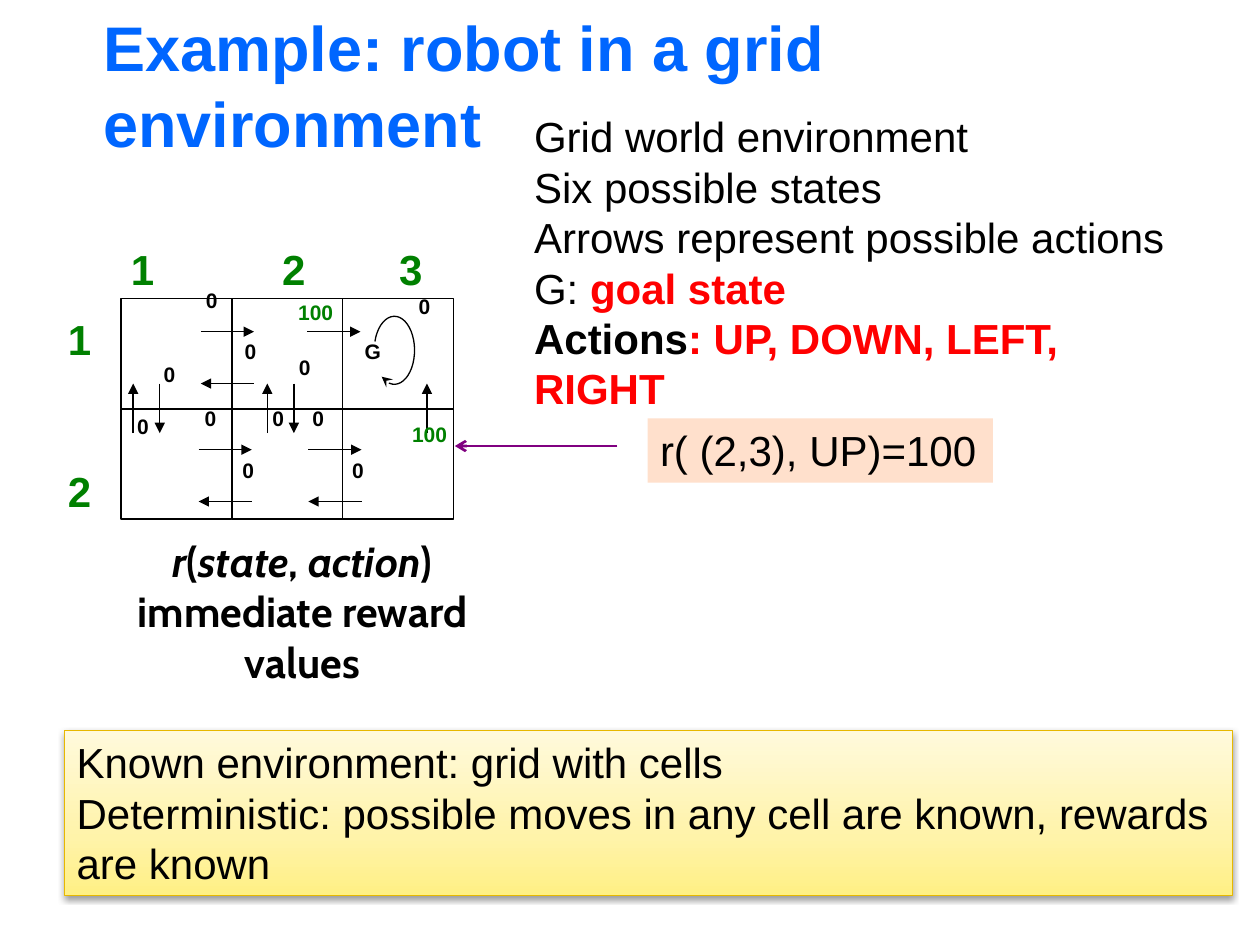
import math
from typing import NamedTuple

import pptx
import pptx.dml.color
import pptx.enum.dml
import pptx.enum.shapes
import pptx.enum.text
import pptx.oxml.ns
import pptx.util

SLIDE_W, SLIDE_H = pptx.util.Inches(10), pptx.util.Inches(7.5)
GRID_LEFT, GRID_TOP, COL, ROW = 9.6, 31.6, 8.8, 11.67
BLACK, GREEN, RED = "000000", "008000", "FF0000"
SHAPE = pptx.enum.shapes.MSO_SHAPE
ALIGN = pptx.enum.text.PP_ALIGN


class Box(NamedTuple):
    """Percentages of the slide's width and height."""
    x: float
    y: float
    w: float
    h: float

    def emu(self) -> list[int]:
        return [round(v * side / 100) for v, side in zip(self, (SLIDE_W, SLIDE_H) * 2)]


class Run(NamedTuple):
    text: str
    color: str | None = None
    bold: bool | None = None
    italic: bool | None = None
    size: float | None = None


class Arrow(NamedTuple):
    """Start and direction in grid columns and rows."""
    col: float
    row: float
    dcol: float
    drow: float


class Reward(NamedTuple):
    col: float
    row: float
    text: str = "0"
    width: float = 3.5
    color: str = BLACK


def rgb(color: str):
    return pptx.dml.color.RGBColor.from_string(color)


def on_grid(col: float, row: float) -> tuple[float, float]:
    return GRID_LEFT + col * COL, GRID_TOP + row * ROW


def child(parent, tag: str, **attrs):
    el = pptx.oxml.parse_xml(f"<{tag} {pptx.oxml.ns.nsdecls('a')}/>")
    for name, value in attrs.items():
        el.set(name, str(value))
    parent.append(el)
    return el


def write(tf, paragraphs: list[list[Run]], size: float = 24, color: str = BLACK,
          bold: bool = False, font: str = "Arial", align=ALIGN.LEFT, wrap: bool = True):
    tf.word_wrap = wrap
    for i, runs in enumerate(paragraphs):
        p = tf.paragraphs[0] if i == 0 else tf.add_paragraph()
        p.alignment = align
        p.font.size, p.font.name, p.font.bold = pptx.util.Pt(size), font, bold
        p.font.color.rgb = rgb(color)
        for run in runs:
            r = p.add_run()
            r.text = run.text
            r.font.bold, r.font.italic = run.bold, run.italic
            if run.color:
                r.font.color.rgb = rgb(run.color)
            if run.size:
                r.font.size = pptx.util.Pt(run.size)


def text_box(s, box: Box, paragraphs: list[list[Run]], **style):
    tf = s.shapes.add_textbox(*box.emu()).text_frame
    write(tf, paragraphs, **style)
    return tf


def rectangle(s, box: Box, fill: str | None = None, line: str | None = None):
    sp = s.shapes.add_shape(SHAPE.RECTANGLE, *box.emu())
    sp.shadow.inherit = False
    sp.text_frame.vertical_anchor = pptx.enum.text.MSO_ANCHOR.TOP
    if fill:
        sp.fill.solid()
        sp.fill.fore_color.rgb = rgb(fill)
    else:
        sp.fill.background()
    if line:
        set_line(sp, line)
    else:
        sp.line.fill.background()
    return sp


def set_line(sp, color: str, width: float = 0.75, head: str | None = None):
    sp.line.color.rgb = rgb(color)
    sp.line.width = pptx.util.Pt(width)
    if head:
        child(sp.line._get_or_add_ln(), "a:tailEnd", type=head)


def arrow(s, start: tuple[float, float], end: tuple[float, float],
          color: str = BLACK, width: float = 0.75, head: str = "triangle"):
    sp = s.shapes.add_connector(pptx.enum.shapes.MSO_CONNECTOR.STRAIGHT,
                                *Box(*start, *end).emu())
    set_line(sp, color, width, head)
    child(sp._element.spPr, "a:effectLst")


def goal_loop(s):
    angles = [math.radians(195 + 294 * i / 36) for i in range(37)]
    points = [Box(31.3 + 1.6 * math.cos(a), 37.07 + 3.6 * math.sin(a), 0, 0).emu()[:2]
              for a in angles]
    builder = s.shapes.build_freeform(*points[0])
    builder.add_line_segments(points[1:], close=False)
    sp = builder.convert_to_shape()
    sp.shadow.inherit = False
    sp.fill.background()
    set_line(sp, BLACK, head="stealth")


def banner(s, box: Box, lines: list[str]):
    sp = rectangle(s, box, line="E7B800")
    sp.fill.gradient()
    sp.fill.gradient_angle = 270
    stops = sp._element.spPr.find(".//" + pptx.oxml.ns.qn("a:gsLst"))
    for stop in list(stops):
        stops.remove(stop)
    for pos, color in ((0, "FFFADC"), (65, "FFF3A9"), (100, "FFF084")):
        child(child(stops, "a:gs", pos=pos * 1000), "a:srgbClr", val=color)
    effects = sp._element.spPr.find(pptx.oxml.ns.qn("a:effectLst"))
    shadow = child(effects, "a:outerShdw", blurRad=40000, dist=20000, dir=5400000, rotWithShape=0)
    child(child(shadow, "a:srgbClr", val=BLACK), "a:alpha", val=38000)
    write(sp.text_frame, [[Run(line)] for line in lines], wrap=False)


ARROWS = [Arrow(c, r, 0.48, 0) for c, r in ((0.72, 0.3), (1.68, 0.3), (0.7, 1.37), (1.69, 1.37))]
ARROWS += [Arrow(c + 0.48, r, -0.48, 0) for c, r in ((0.72, 0.77), (0.7, 1.84), (1.69, 1.84))]
ARROWS += [Arrow(c, 1.22, 0, -0.45) for c in (0.11, 1.32, 2.76)]
ARROWS += [Arrow(c, 0.77, 0, 0.45) for c in (0.35, 1.56)]

REWARDS = [Reward(c, r) for c, r in (
    (0.65, -0.19), (1, 0.27), (2.57, -0.13), (0.64, 0.88), (0.98, 1.35), (1.61, 0.88),
    (1.97, 1.35), (0.03, 0.95), (0.27, 0.48), (1.25, 0.88), (1.49, 0.42))]
REWARDS += [Reward(2.08, 0.27, "G", 3.9), Reward(2.51, 1.03, "100", 4.8, GREEN),
            Reward(1.44, -0.08, "100", 6.1, GREEN)]


def grid_world(s):
    for row in range(2):
        for col in range(3):
            rectangle(s, Box(*on_grid(col, row), COL, ROW), line=BLACK)
    for a in ARROWS:
        arrow(s, on_grid(a.col, a.row), on_grid(a.col + a.dcol, a.row + a.drow))
    for w in REWARDS:
        text_box(s, Box(*on_grid(w.col, w.row), w.width, 4.4),
                 [[Run(w.text, w.color), Run(" ", size=14)]],
                 size=12, bold=True, align=ALIGN.CENTER, wrap=False)
    goal_loop(s)
    header = {"color": GREEN, "bold": True}
    tf = text_box(s, Box(9.4, 25.07, 26.2, 6.67), [[Run("1\t2\t3")]], **header)
    tabs = child(tf.paragraphs[0]._p.get_or_add_pPr(), "a:tabLst")
    tabs.getparent().insert(0, tabs)
    for inches in (1.2, 2.13):
        child(tabs, "a:tab", pos=pptx.util.Inches(inches), algn="l")
    tf = text_box(s, Box(4.4, 32.53, 4.4, 22.93), [[Run("1")], [Run("2")]], **header)
    tf.paragraphs[1].space_before = pptx.util.Pt(58)


def main():
    prs = pptx.Presentation()
    prs.slide_width, prs.slide_height = SLIDE_W, SLIDE_H
    s = prs.slides.add_slide(prs.slide_layouts[5])
    title = s.shapes.title
    title.left, title.top, title.width, title.height = Box(7.2, 4.4, 85, 9.07).emu()
    title.text_frame.vertical_anchor = pptx.enum.text.MSO_ANCHOR.MIDDLE
    title.text_frame.auto_size = pptx.enum.text.MSO_AUTO_SIZE.NONE
    write(title.text_frame, [[Run("Example: robot in a grid environment")]],
          size=36, color="0066FF", bold=True)

    arrow(s, (49, 47.2), (36.1, 47.2), "800080", 1.5, "arrow")
    sp = rectangle(s, Box(51.4, 44.27, 27.4, 6.8), fill="FFE0CC")
    write(sp.text_frame, [[Run("r( (2,3), UP)=100")]], wrap=False)
    text_box(s, Box(41.4, 11.07, 54.8, 33.6), [
        [Run("Grid world environment")],
        [Run("Six possible states")],
        [Run("Arrows represent possible actions")],
        [Run("G: "), Run("goal state", RED, True)],
        [Run("Actions", bold=True), Run(": UP, DOWN, LEFT, RIGHT", RED, True)]])
    banner(s, Box(5.1, 77.33, 92.7, 17.47), [
        "Known environment: grid with cells",
        "Deterministic: possible moves in any cell are known, rewards",
        "are known"])
    text_box(s, Box(7.1, 56, 33.8, 16), [
        [Run("r", italic=True), Run("("), Run("state", italic=True), Run(", "),
         Run("action", italic=True), Run(")")],
        [Run("immediate reward values")]], bold=True, font="Cabin", align=ALIGN.CENTER)
    grid_world(s)
    prs.save("out.pptx")


if __name__ == "__main__":
    main()
